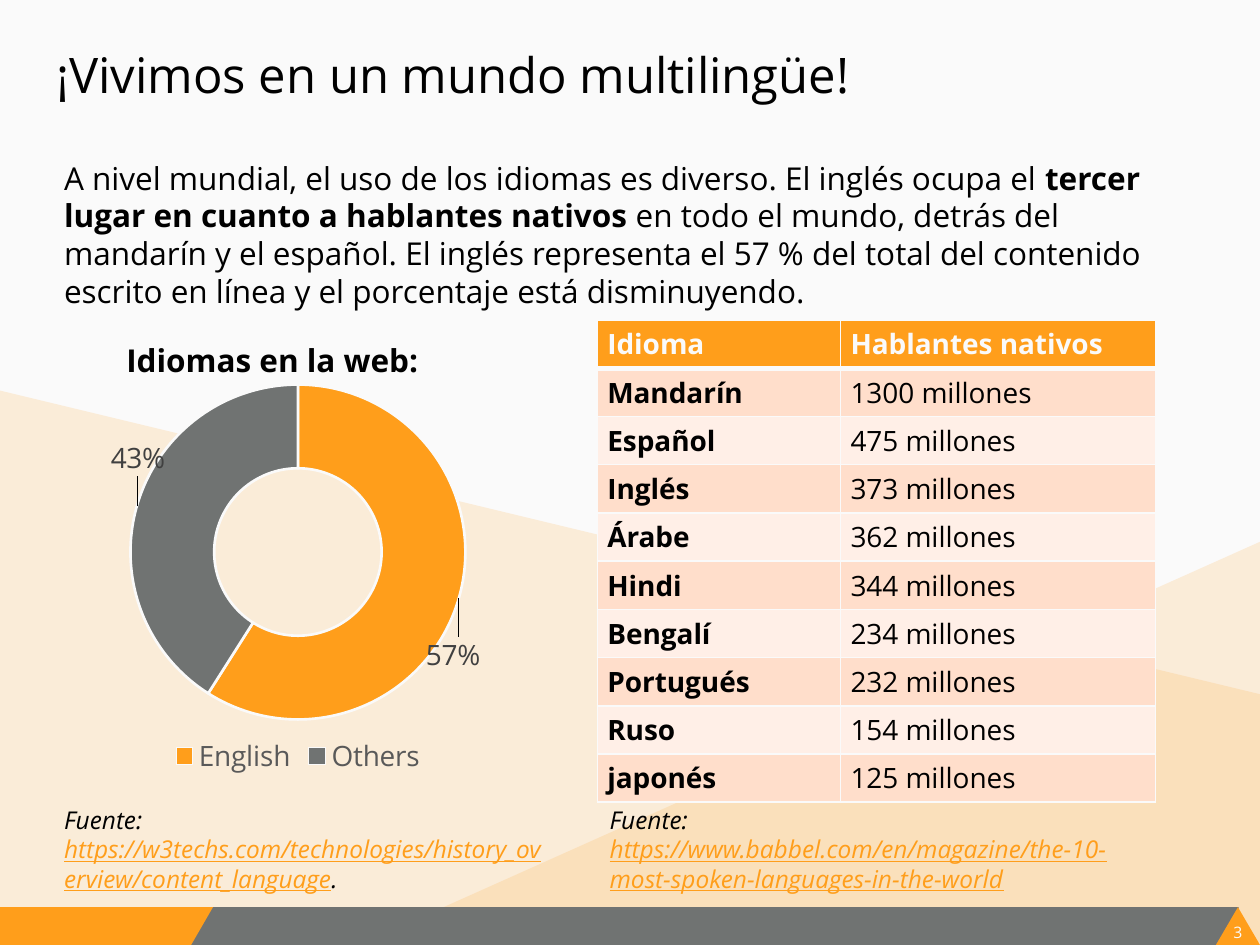
from dataclasses import dataclass
from typing import Optional

from lxml.etree import SubElement
from pptx import Presentation
from pptx.chart.data import CategoryChartData
from pptx.dml.color import RGBColor
from pptx.enum.chart import XL_CHART_TYPE, XL_LEGEND_POSITION
from pptx.enum.shapes import MSO_SHAPE
from pptx.enum.text import MSO_ANCHOR, PP_ALIGN
from pptx.oxml import parse_xml
from pptx.oxml.ns import nsdecls, qn
from pptx.util import Inches, Pt

ORANGE = RGBColor(0xFF, 0x9E, 0x1B)
GRAY = RGBColor(0x70, 0x73, 0x72)
PAPER = RGBColor(0xFA, 0xFA, 0xFA)
BLACK = RGBColor(0, 0, 0)
LABEL = RGBColor(0x40, 0x40, 0x40)
LEGEND = RGBColor(0x59, 0x59, 0x59)
BAND_DARK = RGBColor(0xFF, 0xDE, 0xCB)
BAND_LIGHT = RGBColor(0xFF, 0xEF, 0xE7)
FONT = "Open Sans"


@dataclass
class Block:
    kind: MSO_SHAPE
    left: float
    top: float
    width: float
    height: float
    color: RGBColor
    adjustment: Optional[float] = None
    rotation: float = 0


@dataclass
class Slice:
    name: str
    value: float
    label: str
    color: RGBColor
    shift: tuple[float, float]


BLOCKS = [
    Block(MSO_SHAPE.RECTANGLE, 0.81, 7.2, 9.02, 0.3, GRAY),
    Block(MSO_SHAPE.RECTANGLE, 0, 7.2, 1.5, 0.3, ORANGE),
    Block(MSO_SHAPE.ISOSCELES_TRIANGLE, 9.65, 7.2, 0.35, 0.3, ORANGE, 0.5),
    Block(MSO_SHAPE.PARALLELOGRAM, 1.34, 7.2, 0.35, 0.3, ORANGE, 0.58, 180),
    Block(MSO_SHAPE.RECTANGLE, 1.43, 7.2, 0.14, 0.13, ORANGE),
]
BACKDROPS = [
    [(0, 3.1), (10, 5.51), (10, 7.48), (0, 7.5)],
    [(10, 4.3), (10, 7.5), (2.85, 7.5)],
]
SLICES = [
    Slice("English", 59, "57%", ORANGE, (0.07, 0.15)),
    Slice("Others", 41, "43%", GRAY, (-0.08, -0.13)),
]
SPEAKERS = [
    ("Mandarín", 1300), ("Español", 475), ("Inglés", 373),
    ("Árabe", 362), ("Hindi", 344), ("Bengalí", 234),
    ("Portugués", 232), ("Ruso", 154), ("japonés", 125),
]


def style_font(font, size: float, color: RGBColor = BLACK, bold: bool = False,
               italic: bool = False, underline: bool = False) -> None:
    font.name, font.size = FONT, Pt(size)
    font.bold, font.italic, font.underline = bold, italic, underline
    font.color.rgb = color


def add_span(para, text: str, **style) -> None:
    span = para.add_run()
    span.text = text
    style_font(span.font, **style)


def add_box(page, left: float, top: float, width: float, height: float,
            margins: tuple[float, float] = (0.1, 0.05)):
    box = page.shapes.add_textbox(Inches(left), Inches(top), Inches(width), Inches(height))
    frame = box.text_frame
    frame.word_wrap = True
    frame.margin_left = frame.margin_right = Inches(margins[0])
    frame.margin_top = frame.margin_bottom = Inches(margins[1])
    return frame.paragraphs[0]


def paint(shape, color: RGBColor) -> None:
    shape.shadow.inherit = False
    shape.fill.solid()
    shape.fill.fore_color.rgb = color
    shape.line.fill.background()


def add_backdrop(page, points: list[tuple[float, float]]) -> None:
    start, *others = [(Inches(x), Inches(y)) for x, y in points]
    builder = page.shapes.build_freeform(*start)
    builder.add_line_segments(others, close=True)
    shape = builder.convert_to_shape()
    paint(shape, ORANGE)
    color = shape._element.spPr.find(qn("a:solidFill"))[0]
    SubElement(color, qn("a:alpha"), val="15000")


def add_block(page, block: Block) -> None:
    shape = page.shapes.add_shape(block.kind, Inches(block.left), Inches(block.top),
                                  Inches(block.width), Inches(block.height))
    paint(shape, block.color)
    shape.rotation = block.rotation
    if block.adjustment is not None:
        shape.adjustments[0] = block.adjustment


def add_source(page, left: float, width: float, address: str, ending: str = "") -> None:
    para = add_box(page, left, 6.34, width, 0.81)
    add_span(para, "Fuente: ", size=14, italic=True)
    add_span(para, address, size=14, color=ORANGE, italic=True, underline=True)
    if ending:
        add_span(para, ending, size=14, italic=True)


def fill_cell(cell, text: str, fill: RGBColor, widths: dict[str, float], **style) -> None:
    cell.margin_left = cell.margin_right = Inches(0.08)
    cell.margin_top = cell.margin_bottom = Inches(0.04)
    cell.vertical_anchor = MSO_ANCHOR.MIDDLE
    properties = cell._tc.get_or_add_tcPr()
    for side, width in widths.items():
        properties.append(parse_xml(
            f'<a:ln{side} {nsdecls("a")} w="{Pt(width)}"><a:solidFill>'
            f'<a:srgbClr val="{PAPER}"/></a:solidFill></a:ln{side}>'))
    cell.fill.solid()
    cell.fill.fore_color.rgb = fill
    add_span(cell.text_frame.paragraphs[0], text, size=16, **style)


def add_speakers(page) -> None:
    rows = [("Idioma", "Hablantes nativos")]
    rows += [(name, f"{count} millones") for name, count in SPEAKERS]
    table = page.shapes.add_table(len(rows), 2, Inches(4.74), Inches(2.54),
                                  Inches(4.43), Inches(3.83)).table
    for column, width in zip(table.columns, (1.93, 2.5)):
        column.width = Inches(width)
    for index, row in enumerate(rows):
        header = index == 0
        fill = ORANGE if header else BAND_DARK if index % 2 else BAND_LIGHT
        widths = {"L": 1, "R": 1, "T": 3 if index == 1 else 1, "B": 3 if header else 1}
        for place, text in enumerate(row):
            fill_cell(table.cell(index, place), text, fill, widths,
                      color=PAPER if header else BLACK, bold=header or place == 0)


def set_layout(parent, position: int, **values) -> None:
    for old in parent.findall(qn("c:layout")):
        parent.remove(old)
    items = "".join(f'<c:{key} val="{value}"/>' for key, value in values.items())
    parent.insert(position, parse_xml(
        f'<c:layout {nsdecls("c")}><c:manualLayout>{items}</c:manualLayout></c:layout>'))


def add_web_chart(page) -> None:
    data = CategoryChartData()
    data.categories = [part.name for part in SLICES]
    data.add_series("Series 1", [part.value for part in SLICES])
    chart = page.shapes.add_chart(XL_CHART_TYPE.DOUGHNUT, Inches(0.41), Inches(2.61),
                                  Inches(3.91), Inches(3.58), data).chart
    style_font(chart.font, 10)
    chart.has_title = True
    title = chart.chart_title
    add_span(title.text_frame.paragraphs[0], "Idiomas en la web:", size=18, bold=True)
    set_layout(title._element, 1, xMode="edge", yMode="edge", x=0.14, y=0)
    chart.has_legend = True
    chart.legend.position = XL_LEGEND_POSITION.BOTTOM
    chart.legend.include_in_layout = False
    style_font(chart.legend.font, 16, LEGEND)
    plot = chart.plots[0]
    plot.vary_by_categories = True
    plot._element.find(qn("c:holeSize")).set("val", "75")
    set_layout(chart._chartSpace.chart.plotArea, 0, layoutTarget="inner",
               xMode="edge", yMode="edge", x=0.16, y=0.11, w=0.68, h=0.77)
    plot.has_data_labels = True
    plot.data_labels.show_value = True
    plot.data_labels.show_percentage = False
    style_font(plot.data_labels.font, 16, LABEL)
    for index, part in enumerate(SLICES):
        point = plot.series[0].points[index]
        point.format.fill.solid()
        point.format.fill.fore_color.rgb = part.color
        point.format.line.color.rgb = PAPER
        point.format.line.width = Pt(1.5)
        label = point.data_label
        add_span(label.text_frame.paragraphs[0], part.label, size=16, color=LABEL)
        set_layout(label._dLbl, 1, x=part.shift[0], y=part.shift[1])


def main() -> None:
    deck = Presentation()
    deck.slide_width, deck.slide_height = Inches(10), Inches(7.5)
    page = deck.slides.add_slide(deck.slide_layouts[6])
    page.background.fill.solid()
    page.background.fill.fore_color.rgb = PAPER
    for points in BACKDROPS:
        add_backdrop(page, points)
    for block in BLOCKS:
        add_block(page, block)
    number = add_box(page, 9.74, 7.32, 0.17, 0.15, margins=(0, 0))
    number.alignment = PP_ALIGN.CENTER
    add_span(number, "3", size=9, color=PAPER)
    add_span(add_box(page, 0.35, 0.3, 9.23, 1.25), "¡Vivimos en un mundo multilingüe!", size=28)
    add_speakers(page)
    add_source(page, 4.74, 4.43,
               "https://www.babbel.com/en/magazine/the-10-most-spoken-languages-in-the-world")
    add_source(page, 0.41, 4.08,
               "https://w3techs.com/technologies/history_overview/content_language", ".")
    add_web_chart(page)
    intro = add_box(page, 0.41, 1.21, 9.08, 1.01)
    add_span(intro, "A nivel mundial, el uso de los idiomas es diverso. El inglés ocupa el ", size=18)
    add_span(intro, "tercer lugar en cuanto a hablantes nativos", size=18, bold=True)
    add_span(intro, " en todo el mundo, detrás del mandarín y el español. El inglés representa "
             "el 57 % del total del contenido escrito en línea y el porcentaje está "
             "disminuyendo.", size=18)
    deck.save("out.pptx")


if __name__ == "__main__":
    main()
